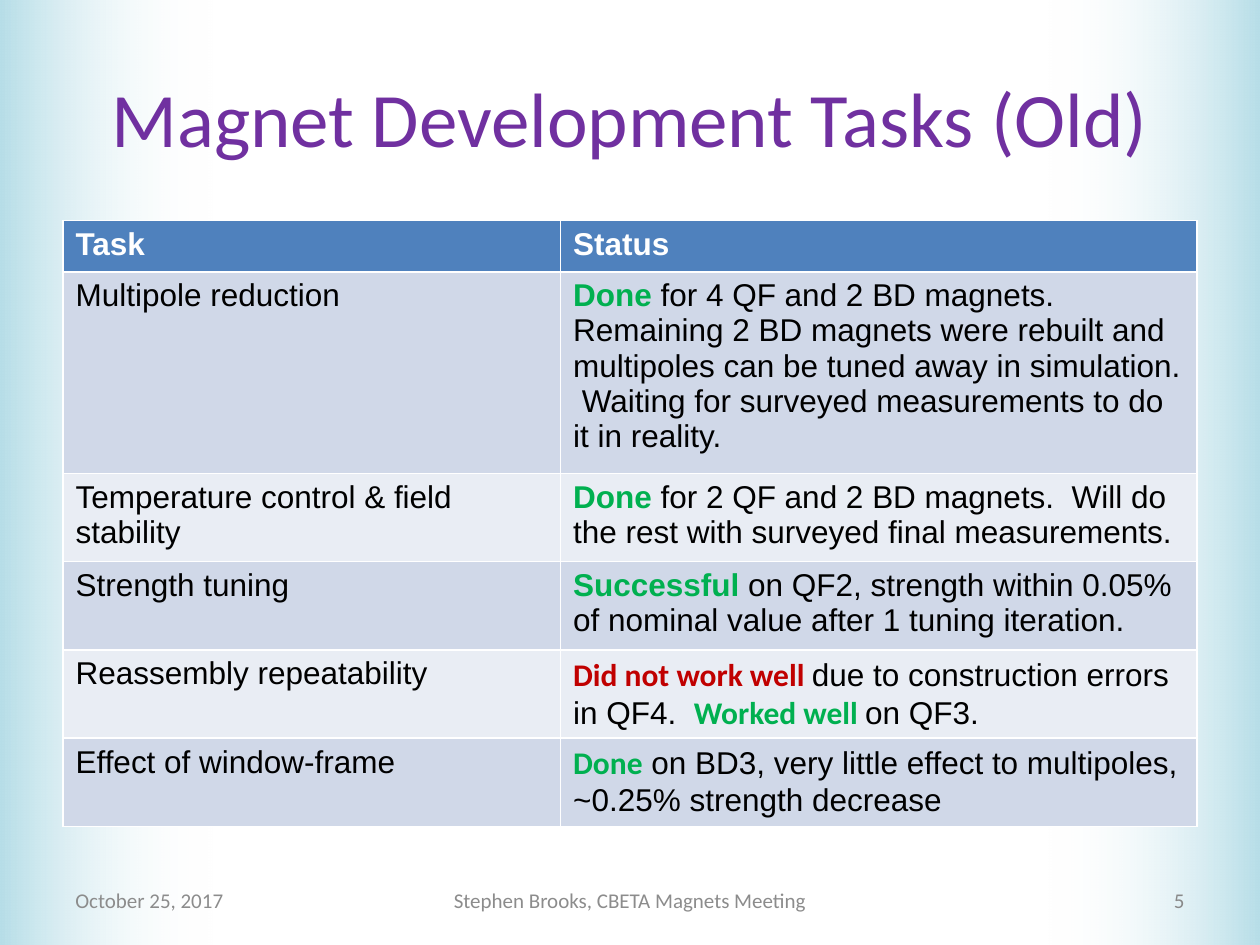
"""Build the magnet development task status slide."""
import lxml.etree
import pptx
import pptx.dml.color
import pptx.enum.shapes
import pptx.enum.text
import pptx.oxml.ns
import pptx.util

Cm = pptx.util.Cm
RGBColor = pptx.dml.color.RGBColor
ALIGN = pptx.enum.text.PP_ALIGN

WHITE = RGBColor(0xFF, 0xFF, 0xFF)
BLACK = RGBColor(0x00, 0x00, 0x00)
PALE_TEAL = RGBColor(0xB7, 0xDE, 0xE8)
PURPLE = RGBColor(0x70, 0x30, 0xA0)
HEADER_BLUE = RGBColor(0x4F, 0x81, 0xBD)
BAND_DARK = RGBColor(0xD0, 0xD8, 0xE8)
BAND_LIGHT = RGBColor(0xE9, 0xED, 0xF4)
GREEN = RGBColor(0x00, 0xB0, 0x50)
RED = RGBColor(0xC0, 0x00, 0x00)
FOOTER_GREY = RGBColor(0x8C, 0x8C, 0x8C)
NUMBER_GREY = RGBColor(0x89, 0x89, 0x89)


def add_run(paragraph, text, size, font_name, color, bold=False):
    run = paragraph.add_run()
    run.text = text
    run.font.size = pptx.util.Pt(size)
    run.font.name = font_name
    run.font.color.rgb = color
    run.font.bold = bold


presentation = pptx.Presentation()
presentation.slide_width = Cm(25.4)
presentation.slide_height = Cm(19.05)
slide = presentation.slides.add_slide(presentation.slide_layouts[6])

for left, rotation in [(21.11, 180), (0, 0)]:
    shape = slide.shapes.add_shape(
        pptx.enum.shapes.MSO_SHAPE.RECTANGLE, Cm(left), Cm(0), Cm(4.29), Cm(19.05))
    shape.rotation = rotation
    shape.shadow.inherit = False
    shape.line.fill.background()
    shape.fill.gradient()
    shape.fill.gradient_angle = 0
    for stop, color in zip(shape.fill.gradient_stops, [PALE_TEAL, WHITE]):
        stop.color.rgb = color
    end_color = shape.element.xpath(".//a:gs[last()]/a:srgbClr")[0]
    lxml.etree.SubElement(end_color, pptx.oxml.ns.qn("a:alpha"), val="0")

text_boxes = [
    (1.27, 0.76, 22.86, 3.18, "Magnet Development Tasks (Old)", 44, PURPLE, ALIGN.CENTER),
    (1.27, 17.65, 5.93, 1.01, "October 25, 2017", 12, FOOTER_GREY, ALIGN.LEFT),
    (8.68, 17.65, 8.04, 1.01, "Stephen Brooks, CBETA Magnets Meeting", 12, FOOTER_GREY,
     ALIGN.CENTER),
    (18.2, 17.65, 5.93, 1.01, "5", 12, NUMBER_GREY, ALIGN.RIGHT),
]
for left, top, width, height, text, size, color, alignment in text_boxes:
    text_box = slide.shapes.add_textbox(Cm(left), Cm(top), Cm(width), Cm(height))
    text_frame = text_box.text_frame
    text_frame.word_wrap = True
    text_frame.vertical_anchor = pptx.enum.text.MSO_ANCHOR.MIDDLE
    paragraph = text_frame.paragraphs[0]
    paragraph.alignment = alignment
    add_run(paragraph, text, size, "Calibri", color)

tasks = [
    ("Multipole reduction", [
        ("Done", "Arial", GREEN),
        (" for 4 QF and 2 BD magnets.  Remaining 2 BD magnets were rebuilt and multipoles "
         "can be tuned away in simulation.  Waiting for surveyed measurements to do it in "
         "reality.", "Arial", BLACK)]),
    ("Temperature control & field stability", [
        ("Done", "Arial", GREEN),
        (" for 2 QF and 2 BD magnets.  Will do the rest with surveyed final measurements.",
         "Arial", BLACK)]),
    ("Strength tuning", [
        ("Successful ", "Arial", GREEN),
        ("on QF2, strength within 0.05% of nominal value after 1 tuning iteration.",
         "Arial", BLACK)]),
    ("Reassembly repeatability", [
        ("Did not work well ", "Calibri", RED),
        ("due to construction errors in QF4.  ", "Arial", BLACK),
        ("Worked well ", "Calibri", GREEN),
        ("on QF3.", "Arial", BLACK)]),
    ("Effect of window-frame", [
        ("Done", "Calibri", GREEN),
        (" on BD3, very little effect to multipoles, ~0.25% strength decrease",
         "Arial", BLACK)]),
]
rows = [([("Task", "Arial", WHITE)], [("Status", "Arial", WHITE)])]
rows += [([(task, "Arial", BLACK)], status) for task, status in tasks]

table = slide.shapes.add_table(
    len(rows), 2, Cm(1.27), Cm(4.45), Cm(22.86), Cm(1.03 * len(rows))).table
table.columns[0].width = Cm(10.03)
table.columns[1].width = Cm(12.83)
for row_index, row in enumerate(rows):
    if row_index == 0:
        fill_color = HEADER_BLUE
    else:
        fill_color = BAND_DARK if row_index % 2 else BAND_LIGHT
    for column_index, runs in enumerate(row):
        cell = table.cell(row_index, column_index)
        cell.fill.solid()
        cell.fill.fore_color.rgb = fill_color
        for text, font_name, color in runs:
            add_run(cell.text_frame.paragraphs[0], text, 18, font_name, color,
                    bold=color != BLACK)

presentation.save("out.pptx")
